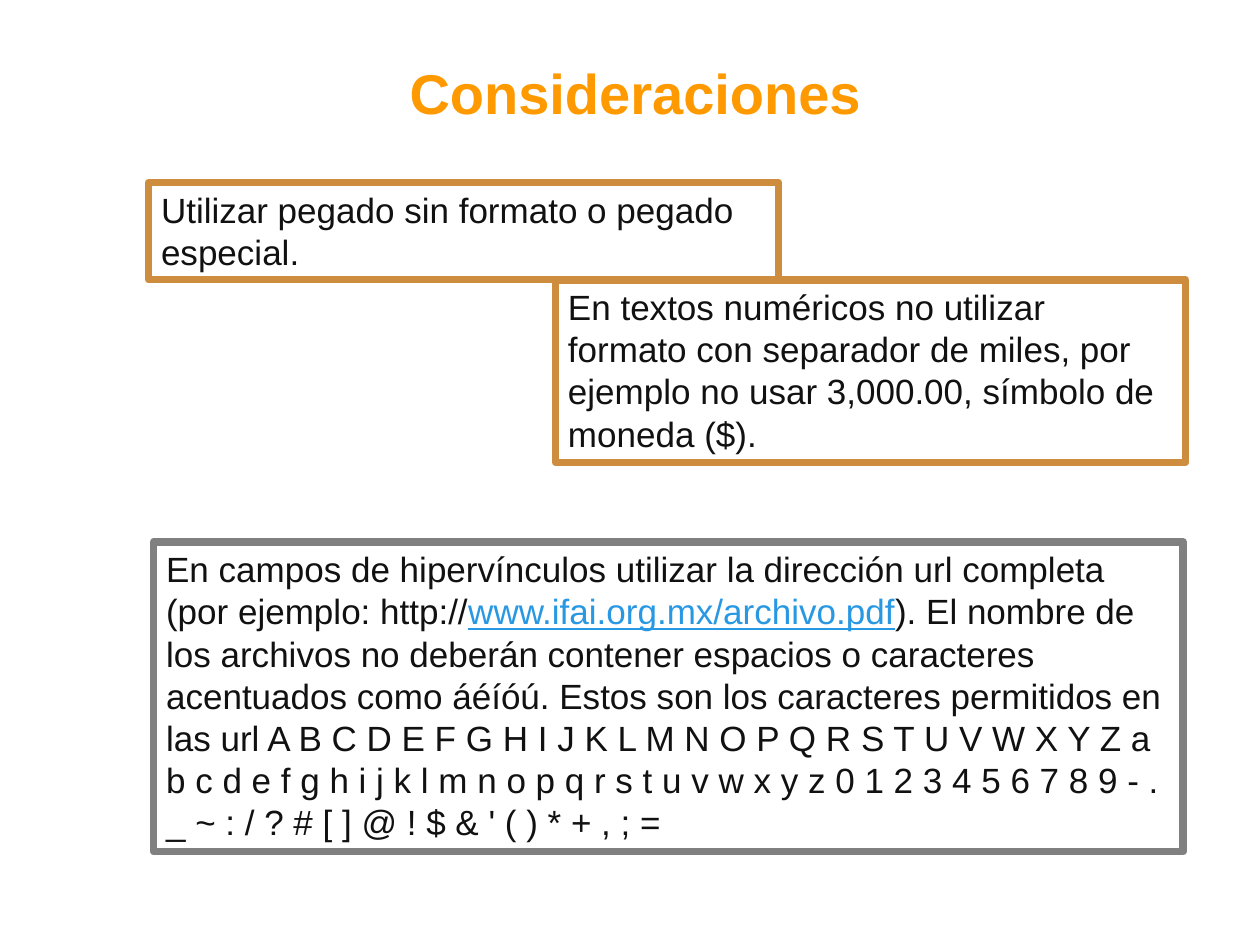
from dataclasses import dataclass

from pptx import Presentation
from pptx.dml.color import RGBColor as Rgb
from pptx.enum.shapes import MSO_SHAPE as Shape
from pptx.enum.text import MSO_ANCHOR as Anchor, MSO_AUTO_SIZE as AutoSize, PP_ALIGN as Align
from pptx.util import Inches, Pt


@dataclass(frozen=True)
class Theme:
    """Colours, type sizes and line weight of the slide."""
    font: str = "Arial"
    title_size: float = 32
    body_size: float = 20
    border: float = 4.33
    title: str = "FF9900"
    ink: str = "111111"
    link: str = "2998E3"
    paper: str = "FFFFFF"
    advice: str = "CE8D3E"
    rules: str = "808080"


THEME = Theme()
WIDTH, HEIGHT = Inches(10), Inches(7.5)

PASTE_TIP = [("Utilizar pegado sin formato o pegado especial.", False)]
NUMBER_TIP = [("En textos numéricos no utilizar formato con separador de miles, "
               "por ejemplo no usar 3,000.00, símbolo de moneda ($).", False)]
URL_RULES = [
    ("En campos de hipervínculos utilizar la dirección url completa "
     "(por ejemplo: http://", False),
    ("www.ifai.org.mx/archivo.pdf", True),
    ("). El nombre de los archivos no deberán contener espacios o caracteres "
     "acentuados como áéíóú. Estos son los caracteres permitidos en las url "
     "A B C D E F G H I J K L M N O P Q R S T U V W X Y Z "
     "a b c d e f g h i j k l m n o p q r s t u v w x y z "
     "0 1 2 3 4 5 6 7 8 9 - . _ ~ : / ? # [ ] @ ! $ & ' ( ) * + , ; =", False),
]


def apply(target, formats):
    """Set each named format value on the target."""
    for name, value in formats.items():
        setattr(target, name, value)


def place(left, top, width, height):
    """Turn shares of the slide's size into a box of lengths."""
    return dict(left=int(left * WIDTH), top=int(top * HEIGHT),
                width=int(width * WIDTH), height=int(height * HEIGHT))


def add_run(paragraph, wording, size, color, **formats):
    """Append a run in the theme's font."""
    run = paragraph.add_run()
    run.text = wording
    apply(run.font, dict(name=THEME.font, size=Pt(size), **formats))
    run.font.color.rgb = Rgb.from_string(color)


def heading(title, box, wording):
    """Place and format the title placeholder."""
    apply(title, box)
    frame = title.text_frame
    apply(frame, dict(margin_left=Inches(0.05), margin_right=Inches(0.05),
                      margin_top=Inches(0.09), margin_bottom=Inches(0.05),
                      vertical_anchor=Anchor.TOP, word_wrap=True,
                      auto_size=AutoSize.NONE))
    paragraph = frame.paragraphs[0]
    paragraph.alignment = Align.JUSTIFY
    add_run(paragraph, wording, THEME.title_size, THEME.title, bold=True)


def framed_note(shapes, box, border, passages):
    """Draw a bordered note whose passages may be styled as links."""
    note = shapes.add_shape(Shape.RECTANGLE, **box)
    note.shadow.inherit = False
    note.fill.solid()
    note.fill.fore_color.rgb = Rgb.from_string(THEME.paper)
    note.line.color.rgb = Rgb.from_string(border)
    note.line.width = Pt(THEME.border)
    apply(note.text_frame, dict(word_wrap=True, vertical_anchor=Anchor.TOP,
                                auto_size=AutoSize.SHAPE_TO_FIT_TEXT))
    paragraph = note.text_frame.paragraphs[0]
    paragraph.alignment = Align.LEFT
    for wording, is_link in passages:
        add_run(paragraph, wording, THEME.body_size,
                THEME.link if is_link else THEME.ink, underline=is_link)


def stepped_tips(shapes, left, top, shift, width, tips):
    """Group notes that step right, each starting where the last one ends."""
    group = shapes.add_group_shape()
    for step, (height, passages) in enumerate(tips):
        box = place(left + step * shift, top, width, height)
        framed_note(group.shapes, box, THEME.advice, passages)
        top += height


def main():
    """Build and save the slide."""
    deck = Presentation()
    apply(deck, dict(slide_width=WIDTH, slide_height=HEIGHT))
    slide = deck.slides.add_slide(deck.slide_layouts[5])
    heading(slide.shapes.title, place(0.32, 0.05, 0.42, 0.12), "Consideraciones")
    stepped_tips(slide.shapes, 0.118, 1.45 / 7.5, 0.323, 0.5,
                 [(0.77 / 7.5, PASTE_TIP), (1.45 / 7.5, NUMBER_TIP)])
    framed_note(slide.shapes, place(0.122, 4.3 / 7.5, 0.817, 2.46 / 7.5),
                THEME.rules, URL_RULES)
    deck.save("out.pptx")


if __name__ == "__main__":
    main()
